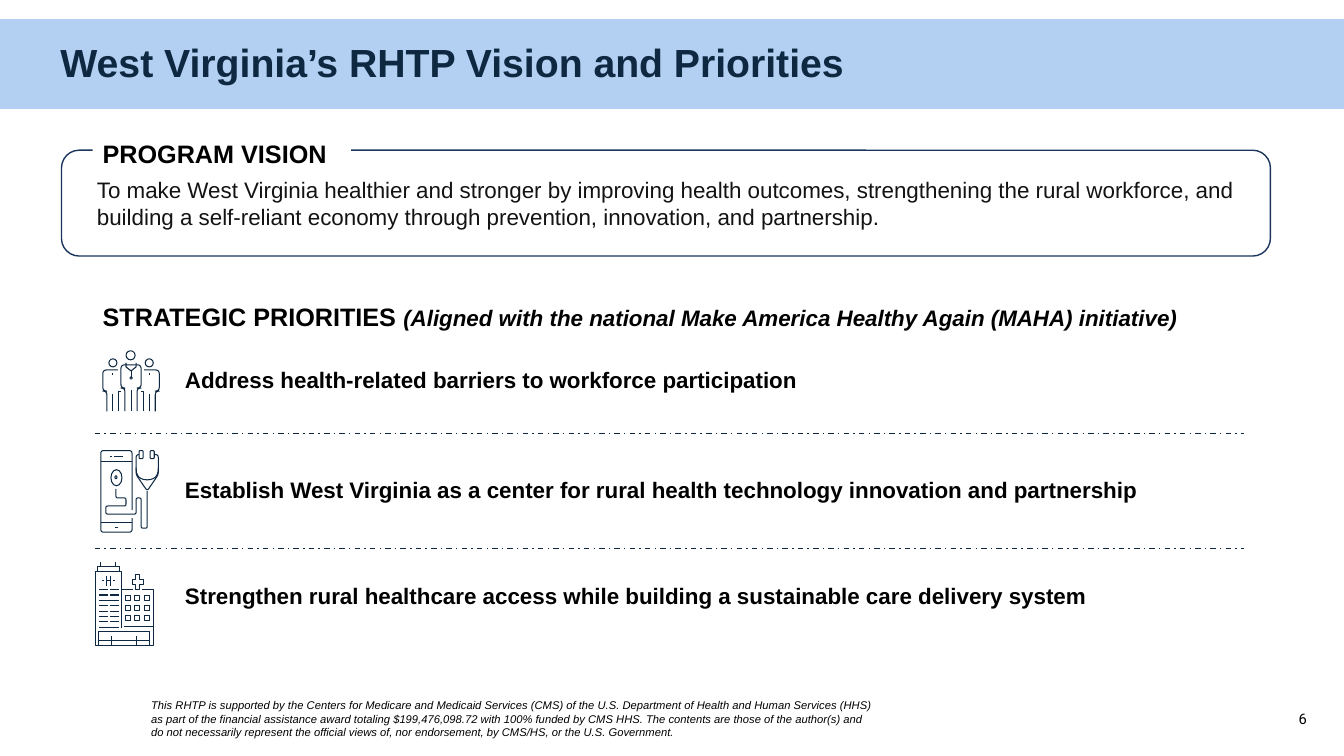
from dataclasses import dataclass
from math import dist

from lxml import etree
from pptx import Presentation
from pptx.dml.color import RGBColor
from pptx.enum.dml import MSO_LINE
from pptx.enum.shapes import MSO_CONNECTOR, MSO_SHAPE
from pptx.enum.text import MSO_ANCHOR, MSO_AUTO_SIZE, PP_ALIGN
from pptx.oxml.ns import qn
from pptx.util import Inches, Pt

RECT, ROUND, OVAL = MSO_SHAPE.RECTANGLE, MSO_SHAPE.ROUNDED_RECTANGLE, MSO_SHAPE.OVAL
STRAIGHT, DASH_DOT = MSO_CONNECTOR.STRAIGHT, MSO_LINE.DASH_DOT
TOP, MIDDLE = MSO_ANCHOR.TOP, MSO_ANCHOR.MIDDLE
LEFT, RIGHT = PP_ALIGN.LEFT, PP_ALIGN.RIGHT
NO_AUTOFIT = MSO_AUTO_SIZE.NONE


@dataclass(frozen=True)
class Theme:
    navy: str = "0E2841"
    frame: str = "1B365D"
    band: str = "B3D0F3"
    white: str = "FFFFFF"
    black: str = "000000"
    body_ink: str = "131314"
    font: str = "Arial"
    number_font: str = "Roboto"
    title: float = 28
    heading: float = 18
    body: float = 16
    number: float = 10.5
    footnote: float = 8
    rule: float = 1
    icon_line: float = 0.75


THEME = Theme()
PADDING = (0.1, 0.05, 0.1, 0.05)
HEADING_PADDING = (0.1, 0, 0, 0)
PRIORITIES = (
    (3.4, "Address health-related barriers to workforce participation"),
    (4.49, "Establish West Virginia as a center for rural health technology innovation and partnership"),
    (5.54, "Strengthen rural healthcare access while building a sustainable care delivery system"),
)
VISION = (
    "To make West Virginia healthier and stronger by improving health outcomes, strengthening "
    "the rural workforce, and building a self-reliant economy through prevention, innovation, "
    "and partnership."
)
FOOTNOTE = (
    "This RHTP is supported by the Centers for Medicare and Medicaid Services (CMS) of the U.S. "
    "Department of Health and Human Services (HHS) as part of the financial assistance award "
    "totaling $199,476,098.72 with 100% funded by CMS HHS. The contents are those of the author(s) "
    "and do not necessarily represent the official views of, nor endorsement, by CMS/HS, or the "
    "U.S. Government."
)


def add_text(holder, text, size=THEME.body, color=THEME.black, bold=False, italic=False,
             font=THEME.font, align=LEFT, spacing=1.0):
    """Append a run to the holder's first paragraph."""
    paragraph = holder.text_frame.paragraphs[0]
    paragraph.alignment = align
    paragraph.line_spacing = spacing
    run = paragraph.add_run()
    run.text = text
    run.font.name, run.font.size = font, Pt(size)
    run.font.bold, run.font.italic = bold, italic
    run.font.color.rgb = RGBColor.from_string(color)


def set_frame(holder, anchor=TOP, padding=PADDING):
    frame = holder.text_frame
    frame.word_wrap = True
    frame.auto_size = NO_AUTOFIT
    frame.vertical_anchor = anchor
    (frame.margin_left, frame.margin_top,
     frame.margin_right, frame.margin_bottom) = map(Inches, padding)


def paint(shape, fill=None, line=None, width=THEME.rule):
    shape.shadow.inherit = False
    if fill:
        shape.fill.solid()
        shape.fill.fore_color.rgb = RGBColor.from_string(fill)
    else:
        shape.fill.background()
    if line:
        shape.line.color.rgb = RGBColor.from_string(line)
        shape.line.width = Pt(width)
    else:
        shape.line.fill.background()


def add_box(shapes, kind, bounds, **colors):
    box = shapes.add_shape(kind, *map(Inches, bounds))
    paint(box, **colors)
    return box


def add_label(shapes, bounds, anchor=TOP):
    label = shapes.add_textbox(*map(Inches, bounds))
    set_frame(label, anchor)
    return label


def add_line(shapes, x1, y1, x2, y2, width=THEME.icon_line, dash=None):
    line = shapes.add_connector(STRAIGHT, *map(Inches, (x1, y1, x2, y2)))
    line.line.color.rgb = RGBColor.from_string(THEME.navy)
    line.line.width = Pt(width)
    if dash:
        line.line.dash_style = dash
    etree.SubElement(line._element.spPr, qn("a:effectLst"))


def icon_shape(shapes, kind, *bounds):
    return add_box(shapes, kind, bounds, line=THEME.navy, width=THEME.icon_line)


def icon_path(shapes, points, close=False):
    start, *rest = [tuple(map(Inches, point)) for point in points]
    builder = shapes.build_freeform(*start, scale=1.0)
    builder.add_line_segments(rest, close=close)
    paint(builder.convert_to_shape(), line=THEME.navy, width=THEME.icon_line)


def rounded(points, radius, steps=6):
    """Replace each inner corner of a path by a short curve."""
    path = [points[0]]
    for before, corner, after in zip(points, points[1:], points[2:]):
        entry, leave = (
            [c + (e - c) * radius / dist(corner, end) for c, e in zip(corner, end)]
            for end in (before, after))
        for step in range(steps + 1):
            t = step / steps
            path.append(tuple((1 - t) ** 2 * a + 2 * t * (1 - t) * c + t ** 2 * b
                              for a, c, b in zip(entry, corner, leave)))
    return path + [points[-1]]


def draw_care_team(shapes):
    middle, floor = 1.3, 4.08
    for side in (-1, 1):
        def x(offset):
            return middle + side * offset
        icon_shape(shapes, OVAL, x(0.18) - 0.04, 3.56, 0.08, 0.08)
        icon_path(shapes, rounded([(x(0.24), floor), (x(0.24), 3.88), (x(0.28), 3.88),
                                   (x(0.28), 3.67), (x(0.13), 3.67)], 0.04))
        icon_path(shapes, [(x(0.1), 3.88), (x(0.12), 3.88), (x(0.12), floor)])
        add_line(shapes, x(0.18), floor, x(0.18), 3.91)
        add_line(shapes, x(0.18), 3.7, x(0.18), 3.72)
        icon_path(shapes, rounded([(x(0.06), floor), (x(0.06), 3.85), (x(0.1), 3.85),
                                   (x(0.1), 3.62), (middle, 3.62)], 0.04))
    icon_shape(shapes, OVAL, 1.25, 3.48, 0.09, 0.09)
    add_line(shapes, middle, 3.87, middle, floor)
    icon_path(shapes, [(1.35, 3.6), (1.35, 3.64), (middle, 3.68), (1.25, 3.64), (1.25, 3.6)])
    add_line(shapes, middle, 3.68, middle, 3.75)
    icon_shape(shapes, OVAL, 1.29, 3.74, 0.02, 0.02)


def draw_telehealth(shapes):
    for x1, x2, y in ((1.14, 1.17, 5.23), (1.09, 1.11, 4.53), (1.13, 1.22, 4.53),
                      (1, 1.31, 4.58), (1, 1.31, 5.18)):
        add_line(shapes, x1, y, x2, y)
    phone = [(1.31, 5.14), (1.31, 5.28), (1, 5.28), (1, 4.47), (1.31, 4.47), (1.31, 5.06)]
    headset = [(1.53, 4.51), (1.57, 4.51), (1.57, 4.71), (1.46, 4.87),
               (1.35, 4.71), (1.35, 4.51), (1.38, 4.51)]
    yoke = [(1.57, 4.64), (1.57, 4.76), (1.35, 4.76), (1.35, 4.64)]
    cable = [(1.46, 4.87), (1.46, 5.24), (1.4, 5.24), (1.4, 4.94), (1.35, 4.94), (1.35, 5.1),
             (1.05, 5.1), (1.05, 5.02), (1.25, 5.02), (1.25, 4.94), (1.15, 4.94), (1.15, 4.85)]
    for points, radius in ((phone, 0.03), (headset, 0.03), (yoke, 0.11), (cable, 0.02)):
        icon_path(shapes, rounded(points, radius))
    for left in (1.38, 1.49):
        icon_shape(shapes, ROUND, left, 4.47, 0.04, 0.08).adjustments[0] = 0.3
    icon_shape(shapes, OVAL, 1.1, 4.66, 0.11, 0.16)
    icon_shape(shapes, OVAL, 1.14, 4.72, 0.02, 0.03)


def draw_hospital(shapes):
    full_rows = (2, 7)
    for row in range(8):
        y = 5.85 + row * 0.053
        spans = ((0.98, 1.18),) if row in full_rows else ((0.98, 1.07), (1.09, 1.18))
        for x1, x2 in spans:
            add_line(shapes, x1, y, x2, y)
    for row in range(3):
        for column in range(3):
            icon_shape(shapes, RECT, 1.24 + column * 0.095, 5.91 + row * 0.1, 0.05, 0.05)
    for x in (1.11, 1.35):
        add_line(shapes, x, 6.31, x, 6.4)
    for x in (1.06, 1.1):
        add_line(shapes, x, 5.71, x, 5.81)
    for x in (1, 1.15):
        add_line(shapes, x, 5.62, x, 5.58)
    for x1, x2, y in ((1.06, 1.1, 5.76), (1.01, 1.03, 5.76), (1.12, 1.14, 5.76),
                      (1.21, 1.32, 5.85), (0.98, 1.48, 6.35), (1.23, 1.52, 6.22)):
        add_line(shapes, x1, y, x2, y)
    icon_shape(shapes, RECT, 0.98, 6.27, 0.5, 0.13)
    icon_shape(shapes, RECT, 0.97, 5.62, 0.22, 0.05)
    icon_path(shapes, [(1.41, 5.85), (1.52, 5.85), (1.52, 6.4), (1.48, 6.4)])
    icon_path(shapes, [(0.98, 6.4), (0.95, 6.4), (0.95, 5.67), (1.21, 5.67), (1.21, 6.23)])
    icon_path(shapes, [(1.42, 5.75), (1.38, 5.75), (1.38, 5.7), (1.34, 5.7), (1.34, 5.75),
                       (1.31, 5.75), (1.31, 5.8), (1.34, 5.8), (1.34, 5.85), (1.38, 5.85),
                       (1.38, 5.8), (1.42, 5.8)], close=True)


def add_title(slide, text):
    band = add_box(slide.shapes, RECT, (0, 0.19, 13.33, 0.89), fill=THEME.band)
    title = slide.shapes.title
    title._element.addprevious(band._element)
    title.left, title.top, title.width, title.height = map(Inches, (0.5, 0.19, 12.61, 0.9))
    set_frame(title, MIDDLE)
    add_text(title, text, size=THEME.title, color=THEME.navy, bold=True, spacing=0.9)


def add_heading(shapes, bounds, text):
    heading = add_box(shapes, RECT, bounds, fill=THEME.white)
    set_frame(heading, padding=HEADING_PADDING)
    add_text(heading, text, size=THEME.heading, bold=True, spacing=1.2)
    return heading


def main():
    deck = Presentation()
    deck.slide_width, deck.slide_height = Inches(13.33), Inches(7.5)
    slide = deck.slides.add_slide(deck.slide_layouts[5])
    shapes = slide.shapes
    add_title(slide, "West Virginia’s RHTP Vision and Priorities")
    footnote = add_label(shapes, (1.4, 6.88, 7.42, 0.5))
    add_text(footnote, FOOTNOTE, size=THEME.footnote, italic=True)

    vision = add_box(shapes, ROUND, (0.61, 1.49, 11.99, 1.05), fill=THEME.white, line=THEME.frame)
    set_frame(vision, MIDDLE, (0.3, 0.06, 0.06, 0.06))
    add_text(vision, VISION, color=THEME.body_ink)
    add_heading(shapes, (0.92, 1.31, 2.56, 0.35), "PROGRAM VISION")

    strategy = add_heading(shapes, (0.92, 2.93, 11.99, 0.34), "STRATEGIC PRIORITIES ")
    add_text(strategy, "(Aligned with the national Make America Healthy Again (MAHA) initiative)",
             bold=True, italic=True, spacing=1.2)
    for top, text in PRIORITIES:
        priority = add_box(shapes, ROUND, (1.7, top, 10.05, 0.74))
        set_frame(priority, MIDDLE)
        add_text(priority, text, bold=True)
    for y in (4.3, 5.44):
        add_line(shapes, 0.94, y, 12.34, y, width=THEME.rule, dash=DASH_DOT)
    for draw_icon in (draw_care_team, draw_telehealth, draw_hospital):
        draw_icon(shapes.add_group_shape().shapes)

    page_number = add_label(shapes, (9.95, 6.93, 3.11, 0.4), MIDDLE)
    add_text(page_number, "6", size=THEME.number, font=THEME.number_font, align=RIGHT)
    deck.save("out.pptx")


if __name__ == "__main__":
    main()
